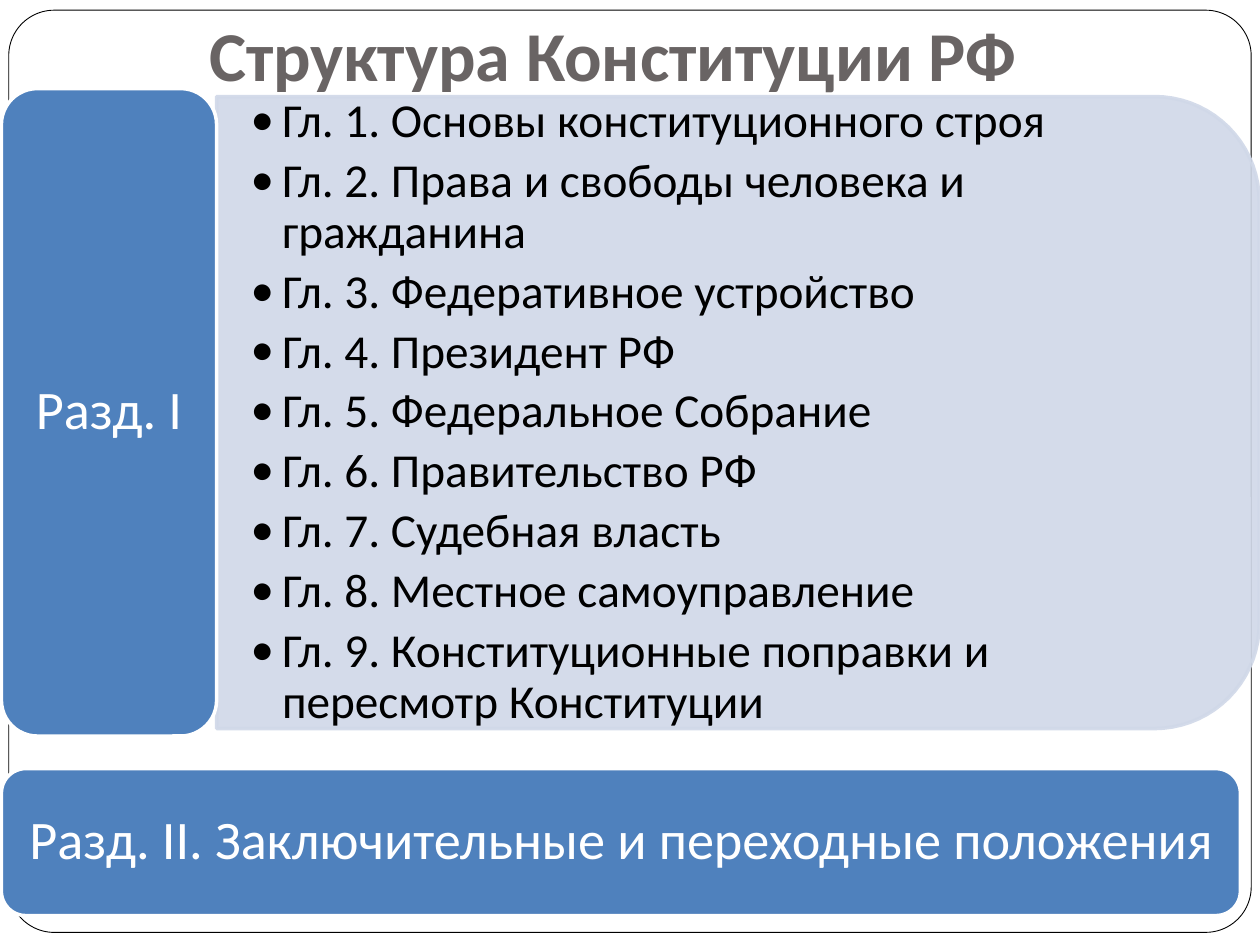
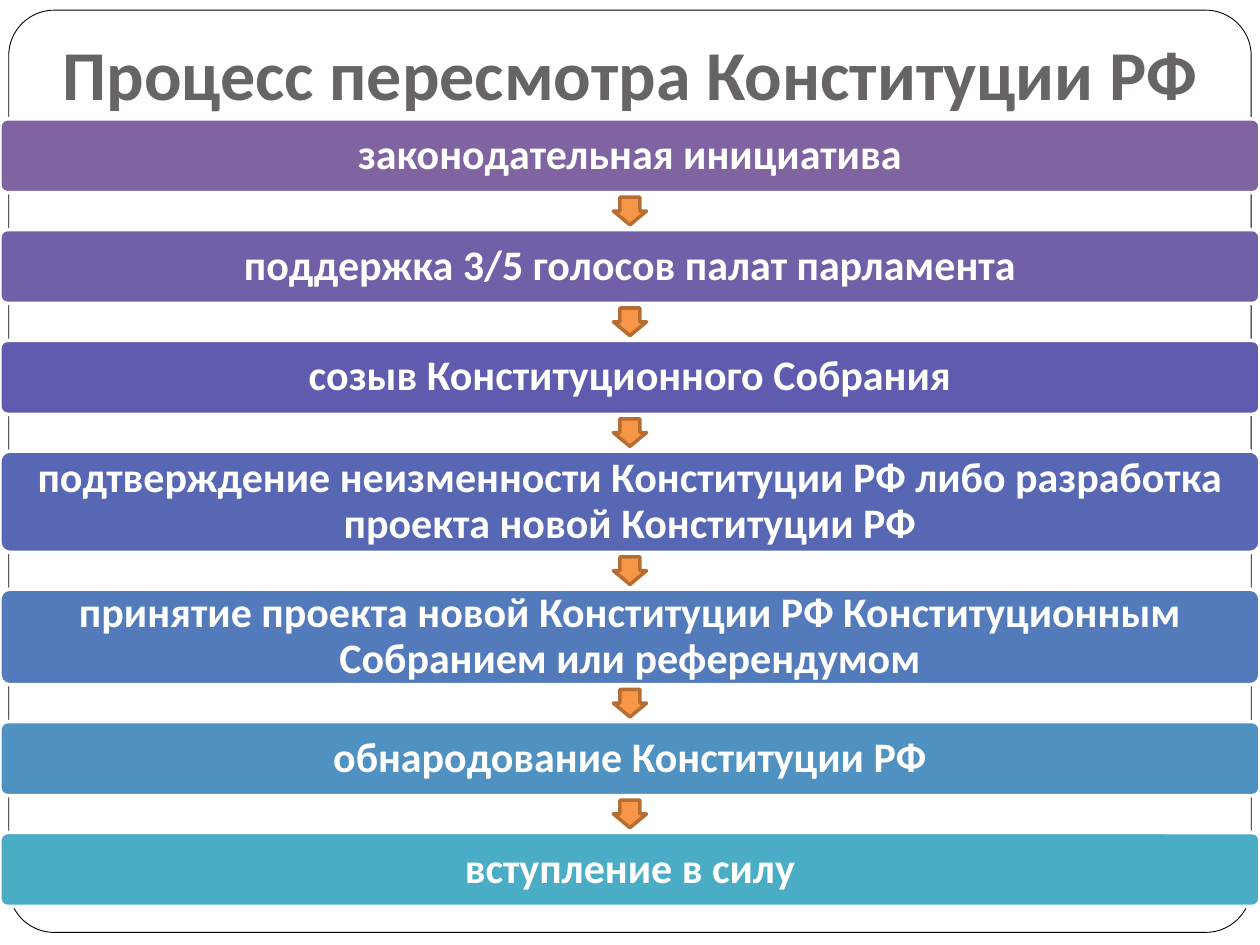
"""Two slides on the structure and the revision of the Constitution."""
import math
from dataclasses import dataclass
from lxml import etree
from pptx import Presentation
from pptx.dml.color import RGBColor
from pptx.enum import shapes, text
from pptx.oxml import ns
from pptx.util import Pt


@dataclass(frozen=True)
class Theme:
    """Colours and type sizes shared by the slides."""
    font: str = "Calibri"
    title: str = "696464"
    black: str = "000000"
    white: str = "FFFFFF"
    section: str = "4F81BD"
    panel: str = "D0D8E8"
    arrow: str = "F79646"
    arrow_edge: str = "B66D31"
    steps: tuple = ("8064A2", "7160A8", "5F5BAE", "5767B4", "537ABA", "4F91C0", "4BACC6")
    title_size: int = 40
    section_size: int = 31
    chapter_size: int = 27
    step_size: int = 24


class Deck:
    """Hold the presentation, its style and the current slide."""

    def __init__(self, theme):
        """Start an empty 4:3 presentation."""
        self.theme = theme
        self.prs = Presentation()
        self.prs.slide_width, self.prs.slide_height = Pt(720), Pt(540)

    def slide(self, title, left, top, width, height):
        """Add a slide with the rounded frame and a title."""
        t = self.theme
        self.s = self.prs.slides.add_slide(self.prs.slide_layouts[5])
        self.box(5, 5.8, 710, 527, 26, None, t.black, 0.5)
        sp = self.s.shapes.title
        sp.left, sp.top, sp.width, sp.height = Pt(left), Pt(top), Pt(width), Pt(height)
        self.set_text(sp, [title], t.title_size, t.title, (7.2, 3.6, 7.2, 7.2), bold=True)
        sp.text_frame.vertical_anchor = text.MSO_ANCHOR.BOTTOM

    def paint(self, sp, fill, line, weight):
        """Set the fill and outline of a shape."""
        sp.shadow.inherit = False
        if fill:
            sp.fill.solid()
            sp.fill.fore_color.rgb = RGBColor.from_string(fill)
        else:
            sp.fill.background()
        sp.line.color.rgb = RGBColor.from_string(line)
        sp.line.width = Pt(weight)

    def set_text(self, sp, lines, size, color, insets, bold=False, spacing=None, after=None,
                 align=text.PP_ALIGN.CENTER):
        """Fill a shape with formatted paragraphs."""
        tf = sp.text_frame
        tf.text = "\n".join(lines)
        tf.word_wrap = True
        tf.auto_size = text.MSO_AUTO_SIZE.NONE
        tf.vertical_anchor = text.MSO_ANCHOR.MIDDLE
        tf.margin_left, tf.margin_top, tf.margin_right, tf.margin_bottom = map(Pt, insets)
        for p in tf.paragraphs:
            p.alignment = align
            if spacing:
                p.line_spacing = spacing
            if after:
                p.space_after = Pt(after)
            for r in p.runs:
                r.font.name, r.font.size, r.font.bold = self.theme.font, Pt(size), bold
                r.font.color.rgb = RGBColor.from_string(color)

    def box(self, left, top, width, height, radius, fill, line, weight=2):
        """Add a rectangle with corners of the given radius."""
        sp = self.s.shapes.add_shape(shapes.MSO_SHAPE.ROUNDED_RECTANGLE,
                                     Pt(left), Pt(top), Pt(width), Pt(height))
        sp.adjustments[0] = radius / min(width, height)
        self.paint(sp, fill, line, weight)
        return sp

    def label(self, words, left, top, width, height, radius, fill, size, inset, after, bold=False):
        """Add a rounded box with white centred text."""
        sp = self.box(left, top, width, height, radius, fill, self.theme.white)
        side = inset - 0.29 * radius
        self.set_text(sp, [words], size, self.theme.white, (side, 0, side, 0), bold, 0.9, after)

    def arrow(self, center, top):
        """Add a small arrow pointing down."""
        width, height = 19, 15.8
        sp = self.s.shapes.add_shape(shapes.MSO_SHAPE.DOWN_ARROW, Pt(center - width / 2),
                                     Pt(top), Pt(width), Pt(height))
        sp.adjustments[0], sp.adjustments[1] = 0.6, 0.5
        self.paint(sp, self.theme.arrow, self.theme.arrow_edge, 2)

    def panel(self, lines, left, top, right, bottom, radius):
        """Add a bulleted panel with rounded right corners."""
        t = self.theme
        points = [(left, top)]
        for y, start in ((top + radius, -90), (bottom - radius, 0)):
            for step in range(0, 91, 5):
                a = math.radians(start + step)
                points.append((right - radius + radius * math.cos(a), y + radius * math.sin(a)))
        points.append((left, bottom))
        points = [(Pt(x), Pt(y)) for x, y in points]
        builder = self.s.shapes.build_freeform(*points[0])
        builder.add_line_segments(points[1:], close=True)
        sp = builder.convert_to_shape()
        self.paint(sp, t.panel, t.panel, 2)
        for color in sp._element.spPr.iter(ns.qn("a:srgbClr")):
            etree.SubElement(color, ns.qn("a:alpha"), val="90000")
        self.set_text(sp, lines, t.chapter_size, t.black, (19.4, 27.4, 37.4, 27.4),
                      spacing=0.9, after=5, align=text.PP_ALIGN.LEFT)
        for p in sp.text_frame.paragraphs:
            pPr = p._p.get_or_add_pPr()
            pPr.set("marL", str(Pt(18)))
            pPr.set("indent", str(Pt(-18)))
            etree.SubElement(pPr, ns.qn("a:buFont"), typeface=t.font)
            etree.SubElement(pPr, ns.qn("a:buChar"), char="•")


CHAPTERS = (
    "Основы конституционного строя",
    "Права и свободы человека и гражданина",
    "Федеративное устройство",
    "Президент РФ",
    "Федеральное Собрание",
    "Правительство РФ",
    "Судебная власть",
    "Местное самоуправление",
    "Конституционные поправки и пересмотр Конституции",
)
STEPS = (
    ("законодательная инициатива", 42.2),
    ("поддержка 3/5 голосов палат парламента", 42.2),
    ("созыв Конституционного Собрания", 42.2),
    ("подтверждение неизменности Конституции РФ либо разработка проекта новой Конституции РФ", 57.8),
    ("принятие проекта новой Конституции РФ Конституционным Собранием или референдумом", 54.6),
    ("обнародование Конституции РФ", 42.2),
    ("вступление в силу", 42.2),
)


def structure(deck):
    """Build the slide on sections and chapters."""
    t = deck.theme
    deck.slide("Структура Конституции РФ", 16.5, 5.8, 667.5, 56)
    chapters = [f"Гл. {n}. {name}" for n, name in enumerate(CHAPTERS, 1)]
    deck.panel(chapters, 123.8, 55.2, 719.6, 416.4, 60)
    deck.label("Разд. I", 0.8, 50.6, 123, 370, 20.5, t.section, t.section_size, 15, 13)
    deck.label("Разд. II. Заключительные и переходные положения", 0.8, 439.2, 708, 84,
               14, t.section, t.section_size, 13.5, 13)


def revision(deck):
    """Build the slide on the steps of a revision."""
    t = deck.theme
    deck.slide("Процесс пересмотра Конституции РФ", 22.5, 5.8, 675, 67)
    top, gap = 67.9, 21.1
    for i, ((words, height), color) in enumerate(zip(STEPS, t.steps)):
        if i:
            deck.arrow(360, top - gap + 2.6)
        deck.label(words, 0, top, 720, height, height / 10, color, t.step_size, 8.6, 10, True)
        top += height + gap


def main():
    """Build both slides and save them."""
    deck = Deck(Theme())
    structure(deck)
    revision(deck)
    deck.prs.save("out.pptx")


if __name__ == "__main__":
    main()
